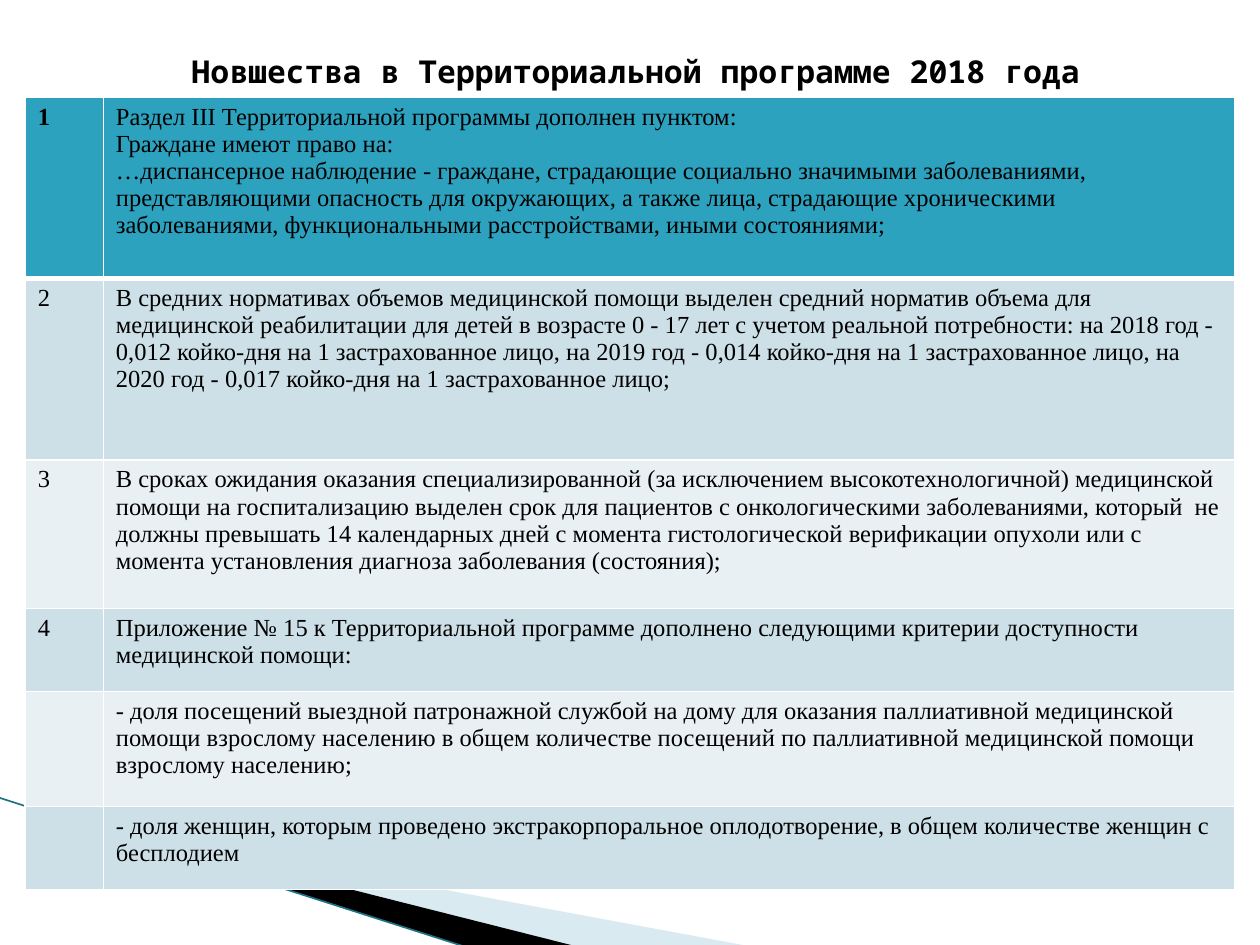
"""Builds a slide with a numbered table of changes in the 2018 programme."""
from lxml import etree
from pptx import Presentation, util as u
from pptx.dml.color import RGBColor
from pptx.enum import shapes, text
from pptx.oxml import ns

HUES = {"ink": "000000", "white": "FFFFFF", "head": "2DA2BF", "odd": "CDE0E8",
        "even": "E8F0F4", "pale": "A0CBDC", "teal": "1F7186"}


def hue(name):
    return RGBColor.from_string(HUES[name])


def write(par, words, font, size, bold):
    run = par.add_run()
    run.text = words
    run.font.name = font
    run.font.size = u.Pt(size)
    run.font.bold = bold
    run.font.color.rgb = hue("ink")


deck = Presentation()
deck.slide_width, deck.slide_height = u.Inches(10), u.Inches(7.5)
slide = deck.slides.add_slide(deck.slide_layouts[5])

wedges = [
    ("pale", [(0.55, 6.51), (5.95, 7.51), (4.56, 7.51), (0.55, 6.5)]),
    ("ink", [(0.53, 6.49), (4.57, 7.51), (3.72, 7.52), (0.54, 6.5)]),
]
for name, points in wedges:
    spots = [(u.Inches(x), u.Inches(y)) for x, y in points]
    pen = slide.shapes.build_freeform(*spots[0])
    pen.add_line_segments(spots[1:], close=True)
    wedge = pen.convert_to_shape()
    wedge.shadow.inherit = False
    wedge.fill.solid()
    wedge.fill.fore_color.rgb = hue(name)
    wedge.line.fill.background()
    if name == "pale":
        shade = wedge.fill._xPr.find(".//" + ns.qn("a:srgbClr"))
        etree.SubElement(shade, ns.qn("a:alpha"), val="40000")

edge = slide.shapes.add_connector(shapes.MSO_CONNECTOR.STRAIGHT, u.Inches(-0.01),
                                  u.Inches(6.33), u.Inches(3.71), u.Inches(7.52))
edge.line.color.rgb = hue("teal")
edge.line.width = u.Pt(0.95)
etree.SubElement(edge._element.spPr, ns.qn("a:effectLst"))

title = slide.shapes.title
title.left, title.top = u.Inches(0.28), u.Inches(0.36)
title.width, title.height = u.Inches(9.53), u.Inches(0.4)
frame = title.text_frame
frame.word_wrap = True
frame.auto_size = text.MSO_AUTO_SIZE.NONE
frame.vertical_anchor = text.MSO_ANCHOR.TOP
head = frame.paragraphs[0]
head.alignment = text.PP_ALIGN.CENTER
write(head, "Новшества в Территориальной программе 2018 года",
      "Noto Sans Mono", 18, True)

rows = [
    (1.44, "1", [
        "Раздел III Территориальной программы дополнен пунктом:",
        "Граждане имеют право на:",
        "…диспансерное наблюдение - граждане, страдающие социально значимыми "
        "заболеваниями, представляющими опасность для окружающих, а также лица, "
        "страдающие хроническими заболеваниями, функциональными расстройствами, "
        "иными состояниями;"]),
    (1.44, "2", [
        "В средних нормативах объемов медицинской помощи выделен средний норматив "
        "объема для медицинской реабилитации для детей в возрасте 0 - 17 лет с учетом "
        "реальной потребности: на 2018 год - 0,012 койко-дня на 1 застрахованное лицо, "
        "на 2019 год - 0,014 койко-дня на 1 застрахованное лицо, на 2020 год - 0,017 "
        "койко-дня на 1 застрахованное лицо;"]),
    (1.18, "3", [
        "В сроках ожидания оказания специализированной (за исключением "
        "высокотехнологичной) медицинской помощи на госпитализацию выделен срок для "
        "пациентов с онкологическими заболеваниями, который  не должны превышать 14 "
        "календарных дней с момента гистологической верификации опухоли или с момента "
        "установления диагноза заболевания (состояния);"]),
    (0.66, "4", [
        "Приложение № 15 к Территориальной программе дополнено следующими критерии "
        "доступности медицинской помощи:"]),
    (0.91, "", [
        "- доля посещений выездной патронажной службой на дому для оказания "
        "паллиативной медицинской помощи взрослому населению в общем количестве "
        "посещений по паллиативной медицинской помощи взрослому населению;"]),
    (0.66, "", [
        "- доля женщин, которым проведено экстракорпоральное оплодотворение, в общем "
        "количестве женщин с бесплодием"]),
]
grid = slide.shapes.add_table(len(rows), 2, u.Inches(0.2), u.Inches(0.77),
                              u.Inches(9.6), u.Inches(6.29)).table
for col, width in zip(grid.columns, (0.62, 8.98)):
    col.width = u.Inches(width)

for i, (height, mark, lines) in enumerate(rows):
    grid.rows[i].height = u.Inches(height)
    for j, parts in enumerate(([mark], lines)):
        cell = grid.cell(i, j)
        cell.fill.solid()
        cell.fill.fore_color.rgb = hue("head" if i == 0 else "odd" if i % 2 else "even")
        props = cell._tc.get_or_add_tcPr()
        for k, side in enumerate("LRTB"):
            thick = (i, side) in ((0, "B"), (1, "T"))
            rule = etree.Element(ns.qn("a:ln" + side), w=str(u.Pt(3 if thick else 1)))
            paint = etree.SubElement(rule, ns.qn("a:solidFill"))
            etree.SubElement(paint, ns.qn("a:srgbClr"), val=HUES["white"])
            props.insert(k, rule)
        for n, words in enumerate(parts):
            body = cell.text_frame
            par = body.add_paragraph() if n else body.paragraphs[0]
            if words:
                write(par, words, "Times New Roman", 14, i == 0 and j == 0)
            else:
                par.font.size = u.Pt(14)

deck.save("out.pptx")
